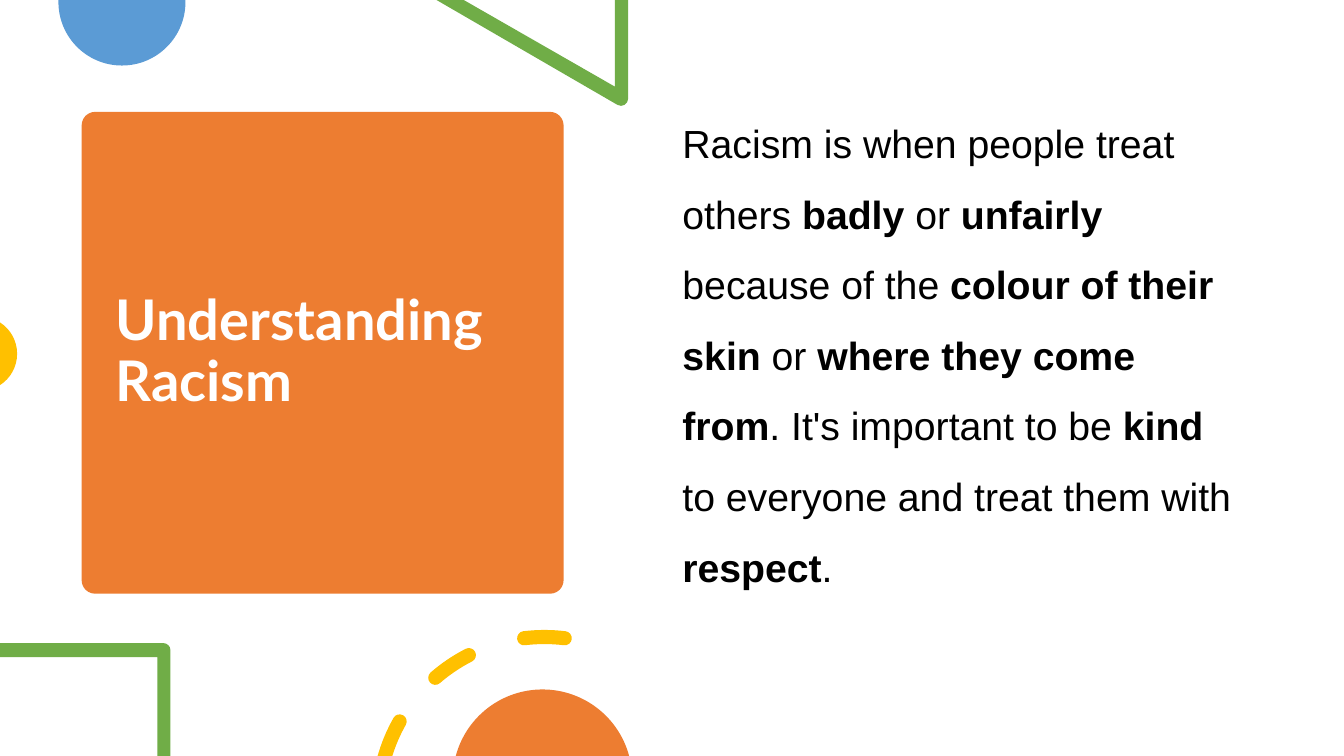
from math import ceil, cos, radians, sin, tan

from pptx import Presentation
from pptx.dml.color import RGBColor
from pptx.enum.shapes import MSO_SHAPE
from pptx.enum.text import MSO_ANCHOR
from pptx.oxml.ns import qn
from pptx.util import Pt

PX = 9144
SLIDE_W, SLIDE_H = 1333, 750
ROUNDED = MSO_SHAPE.ROUNDED_RECTANGLE
TOP, MIDDLE = MSO_ANCHOR.TOP, MSO_ANCHOR.MIDDLE
ORANGE = RGBColor(0xED, 0x7D, 0x31)
BLUE = RGBColor(0x5B, 0x9B, 0xD5)
GREEN = RGBColor(0x70, 0xAD, 0x47)
YELLOW = RGBColor(0xFF, 0xC0, 0x00)
WHITE = RGBColor(0xFF, 0xFF, 0xFF)
BLACK = RGBColor(0, 0, 0)

DEFINITION = [
    ("Racism is when people treat others ", False),
    ("badly ", True),
    ("or ", False),
    ("unfairly", True),
    (" because of the ", False),
    ("colour of their skin", True),
    (" or ", False),
    ("where they come from", True),
    (". It's important to be ", False),
    ("kind", True),
    (" to everyone and treat them with ", False),
    ("respect", True),
    (".", False),
]


def emu(*lengths):
    return [round(length * PX) for length in lengths]


def paint(shape, colour):
    shape.shadow.inherit = False
    shape.fill.solid()
    shape.fill.fore_color.rgb = colour
    shape.line.fill.background()


def lines(*points):
    return [[point] for point in points]


def on_circle(cx, cy, radius, degrees):
    angle = radians(degrees)
    return cx + radius * cos(angle), cy + radius * sin(angle)


def arc(cx, cy, radius, start, end):
    count = ceil(abs(end - start) / 90)
    step = (end - start) / count
    pull = 4 / 3 * tan(radians(step) / 4) * radius
    segments = [[on_circle(cx, cy, radius, start)]]
    for i in range(count):
        a, b = start + i * step, start + (i + 1) * step
        here, there = on_circle(cx, cy, radius, a), on_circle(cx, cy, radius, b)
        segments.append([on_circle(*here, pull, a + 90),
                         on_circle(*there, -pull, b + 90), there])
    return segments


def dash(cx, cy, radius, half, start, end, cut_start=None):
    tip = on_circle(cx, cy, radius, end)
    outline = arc(cx, cy, radius + half, start, end)
    outline += arc(*tip, half, end, end + 180)[1:]
    outline += arc(cx, cy, radius - half, end, cut_start or start)[1:]
    if cut_start is None:
        tail = on_circle(cx, cy, radius, start)
        outline += arc(*tail, half, start + 180, start + 360)[1:]
    return outline


def bend(shape, segments):
    nodes = iter(list(shape.element.iter(qn("a:lnTo"))))
    for segment in segments:
        curve, *handles = [next(nodes) for _ in segment]
        if handles:
            curve.tag = qn("a:cubicBezTo")
        for handle in handles:
            curve.append(handle[0])
            handle.getparent().remove(handle)


def add_outline(slide, left, top, contours, colour):
    builder = None
    for contour in contours:
        origin = emu(*contour[0][0])
        if builder is None:
            builder = slide.shapes.build_freeform(*origin, scale=1.0)
        else:
            builder.move_to(*origin)
        points = [emu(*point) for segment in contour[1:] for point in segment]
        builder.add_line_segments(points, close=True)
    shape = builder.convert_to_shape(*emu(left, top))
    bend(shape, [segment for contour in contours for segment in contour[1:]])
    paint(shape, colour)


def add_text(slide, left, top, width, height, runs, font, size, colour,
             anchor, line_spacing, space_before=0):
    frame = slide.shapes.add_textbox(*emu(left, top, width, height)).text_frame
    frame.word_wrap = True
    frame.vertical_anchor = anchor
    paragraph = frame.paragraphs[0]
    paragraph.line_spacing = line_spacing
    paragraph.space_before = Pt(space_before)
    for text, bold in runs:
        run = paragraph.add_run()
        run.text = text
        run.font.name = font
        run.font.size = Pt(size)
        run.font.bold = bold
        run.font.color.rgb = colour


def title_card(slide, left, top, side):
    card = slide.shapes.add_shape(ROUNDED, *emu(left, top, side, side))
    card.adjustments[0] = 0.028
    paint(card, ORANGE)
    add_text(slide, left + 24, top + 11, side - 47, side - 22,
             [("Understanding Racism", True)], "Lato", 40, WHITE, MIDDLE, 0.9)


def definition(slide, left, top, width, height):
    add_text(slide, left, top, width, height, DEFINITION, "Arial", 28, BLACK,
             TOP, 1.5, 10)


def top_decor(slide, left, top):
    half_disc = lines((184, 0), (58, 0)) + arc(121, 2, 63, 180, 0)
    add_outline(slide, left, top, [half_disc], BLUE)
    triangle = lines((623, 0), (610, 0), (610, 86), (460, 0), (433, 0))
    triangle += arc(616, 98, 7, 120, 0)
    add_outline(slide, left, top, [triangle], GREEN)


def side_decor(slide, left, top):
    add_outline(slide, left, top, [arc(-20, 30, 37, -57.3, 57.3)], YELLOW)


def bottom_decor(slide, left, top):
    frame_corner = lines((0, 13), (0, 27), (156, 27), (156, 125), (169, 125))
    frame_corner += arc(162, 20, 7, 0, -90)
    add_outline(slide, left, top, [frame_corner], GREEN)
    ring = (540, 172, 165, 7)
    dashes = [dash(*ring, 195.86, 209.5, cut_start=197.3),
              dash(*ring, 229, 243),
              dash(*ring, 263, 277)]
    add_outline(slide, left, top, dashes, YELLOW)
    add_outline(slide, left, top, [arc(538, 148, 89, 195, 345)], ORANGE)


def main():
    deck = Presentation()
    deck.slide_width, deck.slide_height = emu(SLIDE_W, SLIDE_H)
    slide = deck.slides.add_slide(deck.slide_layouts[6])
    title_card(slide, 81, 111, 478)
    top_decor(slide, 0, 0)
    side_decor(slide, 0, 321)
    definition(slide, 667, 90, 575, 535)
    bottom_decor(slide, 0, SLIDE_H - 125)
    deck.save("out.pptx")


if __name__ == "__main__":
    main()
